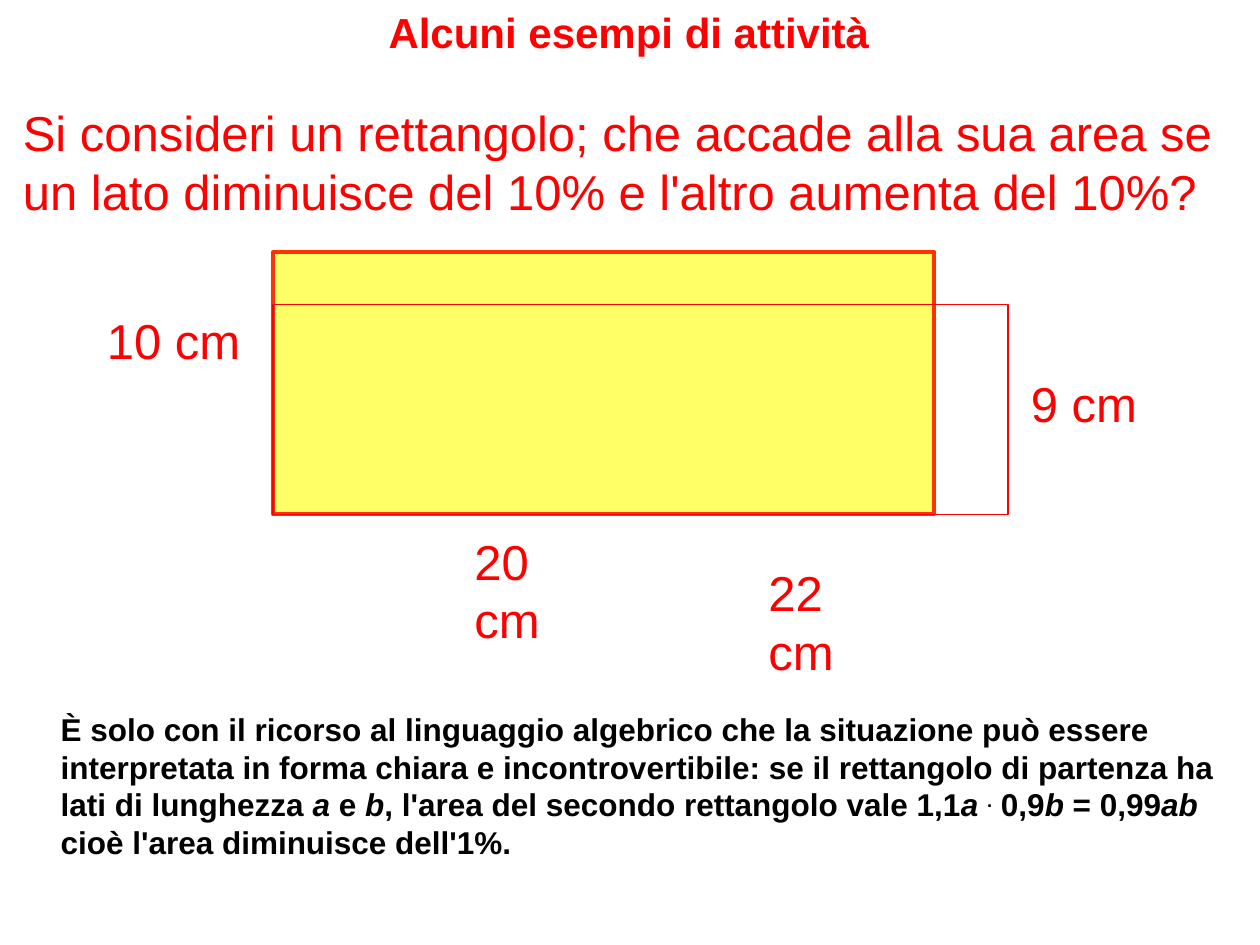
from dataclasses import dataclass

from pptx import Presentation
from pptx.dml.color import RGBColor
from pptx.enum.shapes import MSO_SHAPE
from pptx.enum.text import MSO_ANCHOR, MSO_AUTO_SIZE, PP_ALIGN
from pptx.util import Inches, Pt

COLORS = {"red": "FF0000", "border": "FF3300", "yellow": "FFFF66", "black": "000000"}
FONT = "Arial"
WIDTH, HEIGHT = Inches(10), Inches(7.5)
COLS, ROWS = 120, 90


@dataclass(frozen=True)
class Box:
    """A place on the grid, in columns and rows."""
    col: float
    row: float
    cols: float
    rows: float

    def emu(self) -> tuple[int, ...]:
        cw, rh = WIDTH / COLS, HEIGHT / ROWS
        return tuple(round(n) for n in
                     (self.col * cw, self.row * rh, self.cols * cw, self.rows * rh))


@dataclass(frozen=True)
class Label:
    text: str
    box: Box


@dataclass(frozen=True)
class Rectangle:
    box: Box
    line: str
    weight: float
    fill: str | None = None


@dataclass(frozen=True)
class Run:
    text: str
    italic: bool = False
    raised: bool = False


TITLE = Label("Alcuni esempi di attività", Box(3.2, 0, 113.4, 6.1))
QUESTION = Label(
    "Si consideri un rettangolo; che accade alla sua area se "
    "un lato diminuisce del 10% e l'altro aumenta del 10%?",
    Box(1, 9.2, 120, 16.2))
RECTANGLES = [
    Rectangle(Box(26, 24, 63, 25), "border", 2.25, "yellow"),
    Rectangle(Box(26, 29, 70, 20), "red", 0.75),
]
SIDES = [
    Label("20 cm", Box(44, 50, 14, 12.5)),
    Label("22 cm", Box(72, 53, 14, 12.5)),
    Label("9 cm", Box(97, 35, 14, 6.8)),
    Label("10 cm", Box(9, 29, 17, 6.8)),
]
NOTE_BOX = Box(4.6, 67, 115.4, 15.7)
NOTE = [
    Run("È solo con il ricorso al linguaggio algebrico che la situazione può essere "
        "interpretata in forma chiara e incontrovertibile: se il rettangolo di partenza "
        "ha lati di lunghezza "),
    Run("a", italic=True),
    Run(" e "),
    Run("b", italic=True),
    Run(", l'area del secondo rettangolo vale 1,1"),
    Run("a ", italic=True),
    Run(".", raised=True),
    Run(" 0,9"),
    Run("b", italic=True),
    Run(" = 0,99"),
    Run("ab", italic=True),
    Run(" cioè l'area diminuisce dell'1%."),
]


def rgb(name: str) -> RGBColor:
    return RGBColor.from_string(COLORS[name])


def write(sp, runs: str | list[Run], *, size: float, color: str = "red",
          bold: bool = False, align=PP_ALIGN.LEFT) -> None:
    tf = sp.text_frame
    tf.word_wrap = True
    tf.auto_size = MSO_AUTO_SIZE.NONE
    tf.vertical_anchor = MSO_ANCHOR.TOP
    p = tf.paragraphs[0]
    p.alignment = align
    for part in [Run(runs)] if isinstance(runs, str) else runs:
        r = p.add_run()
        r.text = part.text
        f = r.font
        f.name, f.size, f.bold, f.italic = FONT, Pt(size), bold, part.italic
        f.color.rgb = rgb(color)
        if part.raised:
            r._r.get_or_add_rPr().set("baseline", "30000")


def add_text(s, box: Box, runs: str | list[Run], **style) -> None:
    write(s.shapes.add_textbox(*box.emu()), runs, **style)


def add_rectangle(s, rect: Rectangle) -> None:
    sp = s.shapes.add_shape(MSO_SHAPE.RECTANGLE, *rect.box.emu())
    sp.shadow.inherit = False
    if rect.fill:
        sp.fill.solid()
        sp.fill.fore_color.rgb = rgb(rect.fill)
    else:
        sp.fill.background()
    sp.line.color.rgb = rgb(rect.line)
    sp.line.width = Pt(rect.weight)


def main() -> None:
    prs = Presentation()
    prs.slide_width, prs.slide_height = WIDTH, HEIGHT
    s = prs.slides.add_slide(prs.slide_layouts.get_by_name("Title Only"))

    title = s.shapes.title
    title.left, title.top, title.width, title.height = TITLE.box.emu()
    write(title, TITLE.text, size=24, bold=True, align=PP_ALIGN.CENTER)

    add_text(s, QUESTION.box, QUESTION.text, size=28)
    for rect in RECTANGLES:
        add_rectangle(s, rect)
    for side in SIDES:
        add_text(s, side.box, side.text, size=28)
    add_text(s, NOTE_BOX, NOTE, size=18, color="black", bold=True)
    prs.save("out.pptx")


if __name__ == "__main__":
    main()
